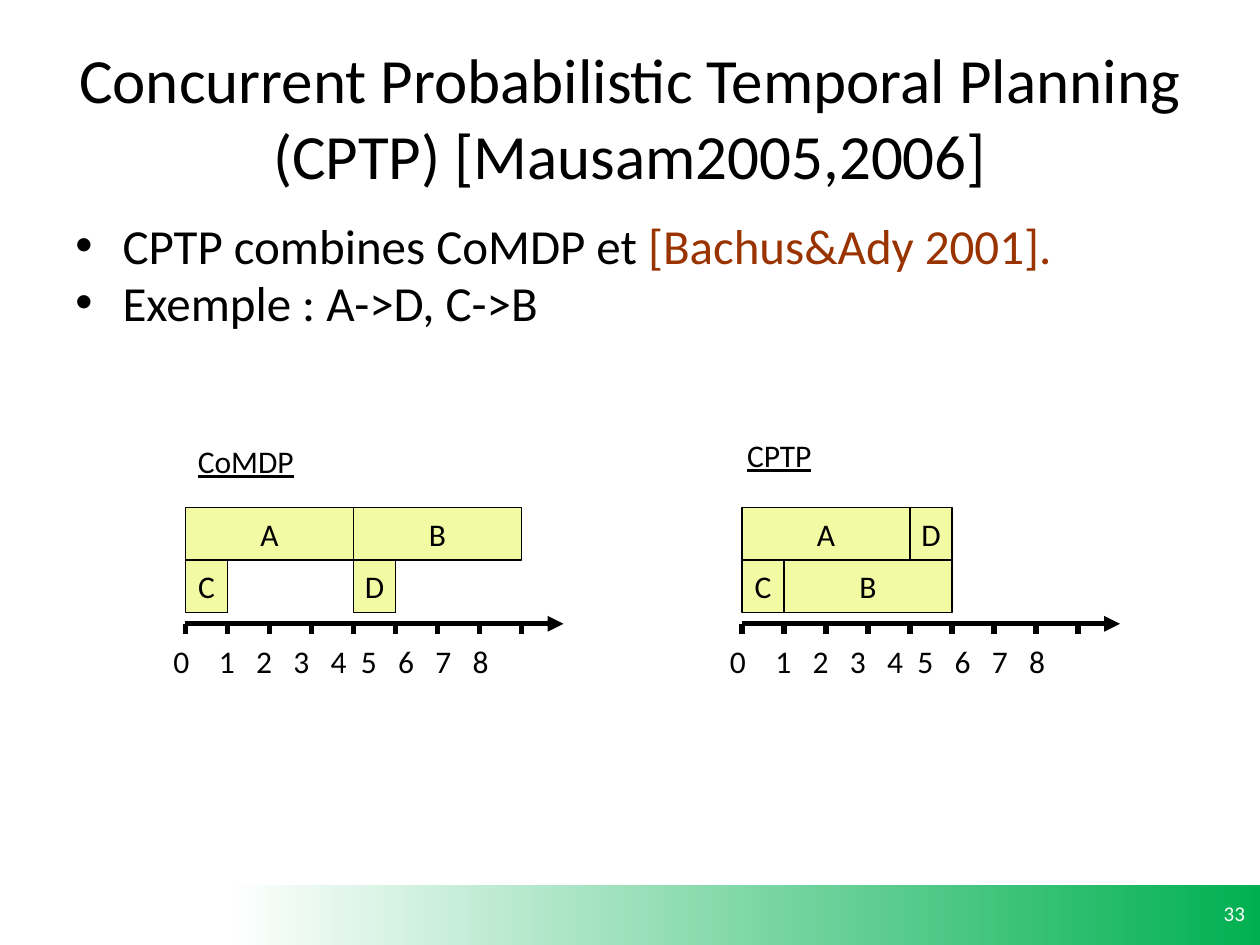
from pptx import Presentation
from pptx.dml.color import RGBColor
from pptx.enum.shapes import MSO_CONNECTOR, MSO_SHAPE
from pptx.enum.text import MSO_ANCHOR, PP_ALIGN
from pptx.oxml.ns import qn
from pptx.util import Pt
from lxml import etree

BLACK = RGBColor(0x00, 0x00, 0x00)
WHITE = RGBColor(0xFF, 0xFF, 0xFF)
GREEN = RGBColor(0x00, 0xB0, 0x50)
YELLOW = RGBColor(0xF2, 0xFA, 0xA4)
BROWN = RGBColor(0x99, 0x33, 0x00)
RECTANGLE = MSO_SHAPE.RECTANGLE
STRAIGHT = MSO_CONNECTOR.STRAIGHT
TOP, MIDDLE = MSO_ANCHOR.TOP, MSO_ANCHOR.MIDDLE
LEFT, CENTER, RIGHT = PP_ALIGN.LEFT, PP_ALIGN.CENTER, PP_ALIGN.RIGHT

deck = Presentation()
deck.slide_width, deck.slide_height = Pt(720), Pt(540)
page = deck.slides.add_slide(deck.slide_layouts[6])


def add_text(left, top, width, height, text, size=18, align=LEFT,
             anchor=TOP, color=BLACK, underline=None, tabs=()):
    box = page.shapes.add_textbox(Pt(left), Pt(top), Pt(width), Pt(height))
    box.text_frame.word_wrap = True
    box.text_frame.vertical_anchor = anchor
    para = box.text_frame.paragraphs[0]
    para.alignment = align
    if tabs:
        tab_list = etree.SubElement(para._p.get_or_add_pPr(), qn("a:tabLst"))
        for stop in tabs:
            etree.SubElement(tab_list, qn("a:tab"), pos=str(int(Pt(stop))), algn="l")
    span = para.add_run()
    span.text = text
    span.font.color.rgb = color
    font_format = {"name": "Calibri", "size": Pt(size), "underline": underline}
    for name, value in font_format.items():
        setattr(span.font, name, value)


def add_line(x1, y1, x2, y2, arrow=False):
    line = page.shapes.add_connector(STRAIGHT, Pt(x1), Pt(y1), Pt(x2), Pt(y2))
    line.line.color.rgb = BLACK
    line.line.width = Pt(3)
    if arrow:
        etree.SubElement(line.line._get_or_add_ln(), qn("a:tailEnd"), type="triangle")
    etree.SubElement(line._element.spPr, qn("a:effectLst"))


# Footer band and page number
band = page.shapes.add_shape(RECTANGLE, Pt(34), Pt(505.5), Pt(686), Pt(34.5))
band.shadow.inherit = False
band.line.fill.background()
band.fill.gradient()
band.fill.gradient_angle = 0
for stop, (position, color) in zip(band.fill.gradient_stops, [(0.14, WHITE), (1, GREEN)]):
    stop.position = position
    stop.color.rgb = color
add_text(551, 507, 167.5, 29, "33", size=12, align=RIGHT, anchor=MIDDLE, color=WHITE)

# Title
add_text(36, 21.6, 648, 90,
         "Concurrent Probabilistic Temporal Planning (CPTP) [Mausam2005,2006]",
         size=36, align=CENTER, anchor=MIDDLE)

# Bullet list
bullets = [
    [("CPTP combines CoMDP et ", BLACK), ("[Bachus&Ady 2001].", BROWN)],
    [("Exemple : A->D, C->B", BLACK)],
]
body = page.shapes.add_textbox(Pt(36), Pt(126), Pt(648), Pt(88.5)).text_frame
body.word_wrap = True
for index, parts in enumerate(bullets):
    para = body.add_paragraph() if index else body.paragraphs[0]
    properties = para._p.get_or_add_pPr()
    properties.set("marL", str(int(Pt(27))))
    properties.set("indent", str(int(Pt(-27))))
    etree.SubElement(properties, qn("a:buFont"), typeface="Arial")
    etree.SubElement(properties, qn("a:buChar"), char="•")
    para.line_spacing = 0.8
    para.space_before = Pt(5.6 if index else 0)
    for text, color in parts:
        span = para.add_run()
        span.text = text
        span.font.color.rgb = color
        for name, value in {"name": "Calibri", "size": Pt(28)}.items():
            setattr(span.font, name, value)

# Two schedules: heading, its place, time origin, actions (name, row, start, duration)
UNIT, ROW_HEIGHT = 24, 30
ROWS_TOP, AXIS_Y = 290, 356.5
schedules = [
    ("CoMDP", 106, 249, 106,
     [("A", 0, 0, 4), ("B", 0, 4, 4), ("C", 1, 0, 1), ("D", 1, 4, 1)]),
    ("CPTP", 419.8, 245.5, 424,
     [("A", 0, 0, 4), ("D", 0, 4, 1), ("C", 1, 0, 1), ("B", 1, 1, 4)]),
]
# The gap between 4 and 5 is narrower than the others
label_tabs = [21.3 * step - (4.1 if step > 3 else 0) for step in range(1, 8)]

for heading, heading_left, heading_top, origin, actions in schedules:
    add_text(heading_left, heading_top, 78, 29, heading, underline=True)

    # Action blocks
    for action, row, start, duration in actions:
        block = page.shapes.add_shape(
            RECTANGLE, Pt(origin + start * UNIT), Pt(ROWS_TOP + row * ROW_HEIGHT),
            Pt(duration * UNIT), Pt(ROW_HEIGHT))
        block.shadow.inherit = False
        block.fill.solid()
        block.fill.fore_color.rgb = YELLOW
        block.line.color.rgb = BLACK
        block.line.width = Pt(0.75)
        frame = block.text_frame
        frame.word_wrap = False
        frame.vertical_anchor = MIDDLE
        para = frame.paragraphs[0]
        para.alignment = CENTER
        span = para.add_run()
        span.text = action
        span.font.color.rgb = BLACK
        for name, value in {"name": "Calibri", "size": Pt(18)}.items():
            setattr(span.font, name, value)

    # Time axis, ticks and numbers
    add_line(origin, AXIS_Y, origin + 9 * UNIT, AXIS_Y, arrow=True)
    for tick in range(9):
        x = origin + tick * UNIT
        add_line(x, AXIS_Y, x, AXIS_Y + 6)
    add_text(origin - 14, 363.5, 25, 29, "0")
    add_text(origin + 12, 363.5, 200, 29, "\t".join("12345678"), tabs=label_tabs)

deck.save("out.pptx")
